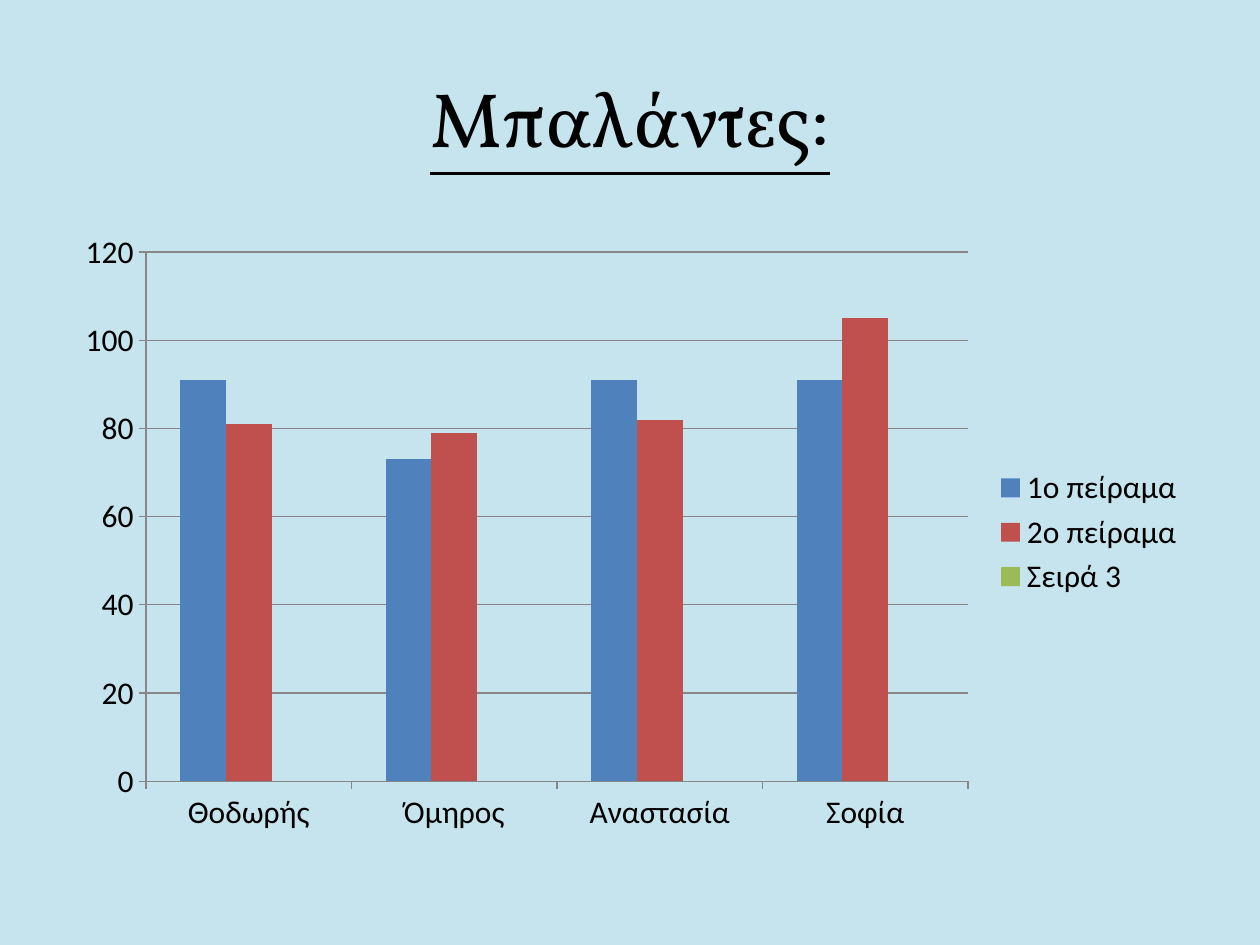
from dataclasses import dataclass
from typing import Optional

from pptx import Presentation
from pptx.chart.data import CategoryChartData
from pptx.dml.color import RGBColor
from pptx.enum.chart import XL_CHART_TYPE, XL_LEGEND_POSITION, XL_TICK_MARK
from pptx.enum.text import MSO_ANCHOR, PP_ALIGN
from pptx.util import Pt

COLUMNS = XL_CHART_TYPE.COLUMN_CLUSTERED
RIGHT = XL_LEGEND_POSITION.RIGHT
OUT = XL_TICK_MARK.OUTSIDE
MIDDLE = MSO_ANCHOR.MIDDLE
CENTER = PP_ALIGN.CENTER


@dataclass(frozen=True)
class Theme:
    back: str = "C5E4ED"
    ink: str = "000000"
    grid: str = "878787"
    head_font: str = "Vollkorn"
    body_font: str = "Calibri"
    head_size: int = 44
    body_size: int = 18
    line: float = 0.75


@dataclass(frozen=True)
class Box:
    left: float
    top: float
    width: float
    height: float

    def points(self) -> tuple:
        return Pt(self.left), Pt(self.top), Pt(self.width), Pt(self.height)


@dataclass(frozen=True)
class Trial:
    name: str
    scores: tuple[Optional[int], ...]
    color: str


THEME = Theme()
TITLE = Box(36, 21.6, 648, 90)
CHART = Box(36, 126, 648, 356.4)
NAMES = ("Θοδωρής", "Όμηρος", "Αναστασία", "Σοφία")
TRIALS = (
    Trial("1ο πείραμα", (91, 73, 91, 91), "4F81BD"),
    Trial("2ο πείραμα", (81, 79, 82, 105), "C0504D"),
    Trial("Σειρά 3", (None,) * len(NAMES), "9BBB59"),
)


def set_font(font, name: str, size: int) -> None:
    font.name = name
    font.size = Pt(size)
    font.color.rgb = RGBColor.from_string(THEME.ink)


def set_line(line) -> None:
    line.color.rgb = RGBColor.from_string(THEME.grid)
    line.width = Pt(THEME.line)


def add_title(slide, text: str, box: Box) -> None:
    frame = slide.shapes.add_textbox(*box.points()).text_frame
    frame.word_wrap = True
    frame.vertical_anchor = MIDDLE
    frame.text = text
    para = frame.paragraphs[0]
    para.alignment = CENTER
    font = para.runs[0].font
    set_font(font, THEME.head_font, THEME.head_size)
    font.underline = True


def add_scores(slide, trials: tuple[Trial, ...], box: Box) -> None:
    data = CategoryChartData()
    data.categories = NAMES
    for trial in trials:
        data.add_series(trial.name, trial.scores)
    chart = slide.shapes.add_chart(COLUMNS, *box.points(), data).chart
    set_font(chart.font, THEME.body_font, THEME.body_size)
    chart.has_title = False
    chart.has_legend = True
    chart.legend.position = RIGHT
    chart.legend.include_in_layout = False

    plot = chart.plots[0]
    plot.gap_width = 150
    plot.overlap = 0
    plot.vary_by_categories = False
    for series, trial in zip(plot.series, trials):
        series.format.fill.solid()
        series.format.fill.fore_color.rgb = RGBColor.from_string(trial.color)

    for axis in (chart.category_axis, chart.value_axis):
        axis.major_tick_mark = OUT
        set_line(axis.format.line)
    scale = chart.value_axis
    scale.minimum_scale, scale.maximum_scale, scale.major_unit = 0, 120, 20
    scale.has_major_gridlines = True
    set_line(scale.major_gridlines.format.line)


def main() -> None:
    deck = Presentation()
    deck.slide_width, deck.slide_height = Pt(720), Pt(540)
    slide = deck.slides.add_slide(deck.slide_layouts[6])
    fill = slide.background.fill
    fill.solid()
    fill.fore_color.rgb = RGBColor.from_string(THEME.back)
    add_title(slide, "Μπαλάντες:", TITLE)
    add_scores(slide, TRIALS, CHART)
    deck.save("out.pptx")


if __name__ == "__main__":
    main()
